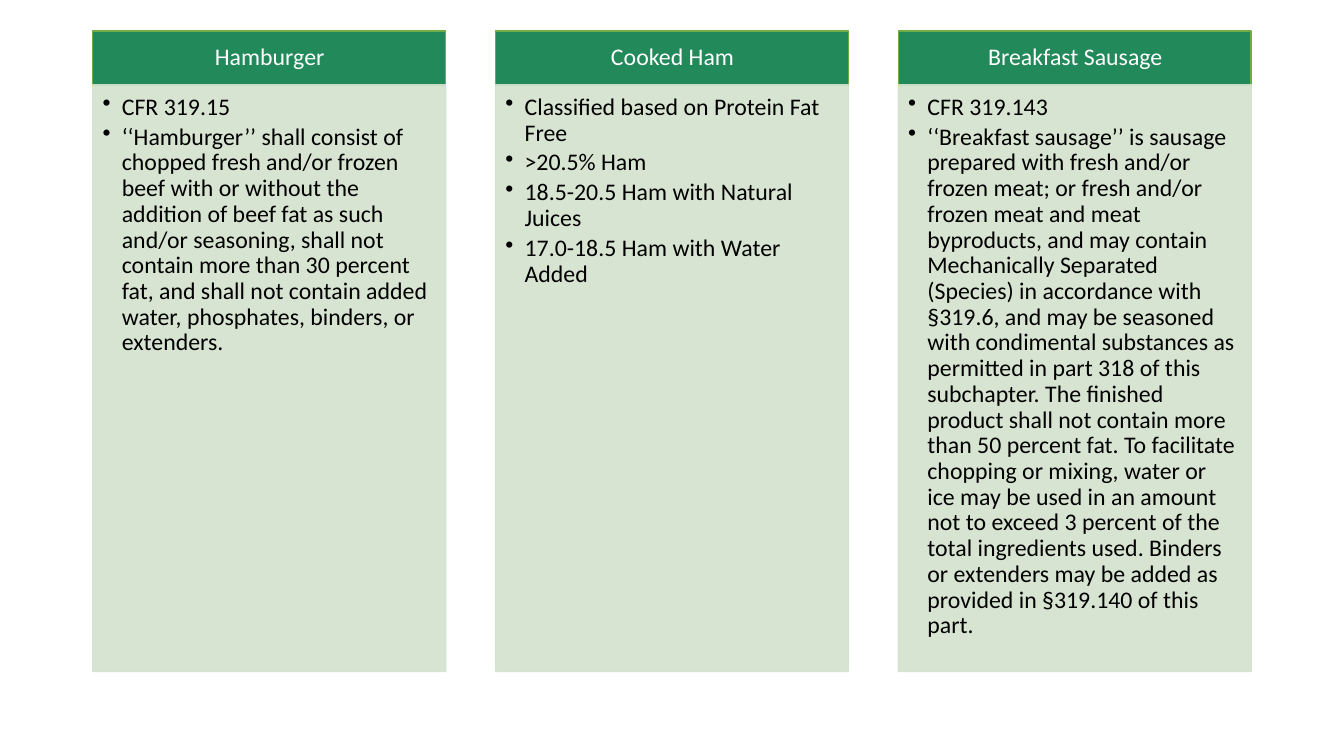
from dataclasses import dataclass

import lxml.etree
import pptx
import pptx.dml.color
import pptx.enum.shapes
import pptx.enum.text
import pptx.oxml.ns
import pptx.util

Inches = pptx.util.Inches
Pt = pptx.util.Pt
qn = pptx.oxml.ns.qn
PP_ALIGN = pptx.enum.text.PP_ALIGN
MSO_ANCHOR = pptx.enum.text.MSO_ANCHOR


@dataclass(frozen=True)
class Theme:
    header: str = "22895A"
    header_line: str = "70AD47"
    panel: str = "D4E2CE"
    header_text: str = "FFFFFF"
    body_text: str = "000000"
    font: str = "Calibri"
    size: int = 17
    panel_opacity: int = 90


@dataclass(frozen=True)
class Product:
    name: str
    rules: tuple[str, ...]
    text_height: float


THEME = Theme()

# Column geometry in inches
FIRST_LEFT, LAST_LEFT, WIDTH = 0.92, 8.91, 3.5
HEADER_TOP, HEADER_HEIGHT = 0.31, 0.54
PANEL_TOP, PANEL_HEIGHT = 0.84, 5.82
BULLET_INDENT = 0.19

PRODUCTS = (
    Product("Hamburger", (
        "CFR 319.15",
        "‘‘Hamburger’’ shall consist of chopped fresh and/or frozen beef with or "
        "without the addition of beef fat as such and/or seasoning, shall not "
        "contain more than 30 percent fat, and shall not contain added water, "
        "phosphates, binders, or extenders.",
    ), 2.9),
    Product("Cooked Ham", (
        "Classified based on Protein Fat Free",
        ">20.5% Ham",
        "18.5-20.5 Ham with Natural Juices",
        "17.0-18.5 Ham with Water Added",
    ), 2.19),
    Product("Breakfast Sausage", (
        "CFR 319.143",
        "‘‘Breakfast sausage’’ is sausage prepared with fresh and/or frozen meat; "
        "or fresh and/or frozen meat and meat byproducts, and may contain "
        "Mechanically Separated (Species) in accordance with §319.6, and may be "
        "seasoned with condimental substances as permitted in part 318 of this "
        "subchapter. The finished product shall not contain more than 50 percent "
        "fat. To facilitate chopping or mixing, water or ice may be used in an "
        "amount not to exceed 3 percent of the total ingredients used. Binders or "
        "extenders may be added as provided in §319.140 of this part.",
    ), 5.78),
)


def rgb(color: str) -> pptx.dml.color.RGBColor:
    return pptx.dml.color.RGBColor.from_string(color)


def set_all(target, formats: dict) -> None:
    for name, value in formats.items():
        setattr(target, name, value)


def add_box(s, left: float, top: float, height: float, fill: str, line: str,
            opacity: int = 100) -> None:
    sp = s.shapes.add_shape(pptx.enum.shapes.MSO_SHAPE.RECTANGLE, Inches(left),
                            Inches(top), Inches(WIDTH), Inches(height))
    sp.shadow.inherit = False
    sp.line.width = Pt(1)
    for paint, color in ((sp.fill, fill), (sp.line.fill, line)):
        paint.solid()
        paint.fore_color.rgb = rgb(color)
    if opacity < 100:
        for clr in sp._element.spPr.iter(qn("a:srgbClr")):
            lxml.etree.SubElement(clr, qn("a:alpha"), val=str(opacity * 1000))


def add_bullet(p) -> None:
    pPr = p._p.get_or_add_pPr()
    indent = Inches(BULLET_INDENT)
    pPr.set("marL", str(indent))
    pPr.set("indent", str(-indent))
    lxml.etree.SubElement(pPr, qn("a:buChar"), char="•")


def add_text(s, at: tuple[float, float, float, float], lines: tuple[str, ...],
             color: str, inset: float, anchor: MSO_ANCHOR, formats: dict,
             bulleted: bool = False) -> None:
    tf = s.shapes.add_textbox(*map(Inches, at)).text_frame
    set_all(tf, {
        "word_wrap": True,
        "auto_size": pptx.enum.text.MSO_AUTO_SIZE.SHAPE_TO_FIT_TEXT,
        "vertical_anchor": anchor,
        **{f"margin_{side}": Inches(inset)
           for side in ("left", "top", "right", "bottom")},
    })
    for i, line in enumerate(lines):
        p = tf.add_paragraph() if i else tf.paragraphs[0]
        set_all(p, {"line_spacing": 0.9, **formats})
        if bulleted:
            add_bullet(p)
        r = p.add_run()
        r.text = line
        set_all(r.font, {"name": THEME.font, "size": Pt(THEME.size)})
        r.font.color.rgb = rgb(color)


def add_column(s, product: Product, left: float) -> None:
    # Header
    add_box(s, left, HEADER_TOP, HEADER_HEIGHT, THEME.header, THEME.header_line)
    add_text(s, (left + 0.06, HEADER_TOP + 0.04, 3.39, 0.44), (product.name,),
             THEME.header_text, 0.08, MSO_ANCHOR.MIDDLE,
             {"alignment": PP_ALIGN.CENTER, "space_before": Pt(7)})
    # Panel with bulleted rules
    add_box(s, left, PANEL_TOP, PANEL_HEIGHT, THEME.panel, THEME.panel,
            THEME.panel_opacity)
    add_text(s, (left, PANEL_TOP, 3.47, product.text_height), product.rules,
             THEME.body_text, 0.1, MSO_ANCHOR.TOP,
             {"level": 1, "alignment": PP_ALIGN.LEFT, "space_before": Pt(3)},
             bulleted=True)


def main() -> None:
    prs = pptx.Presentation()
    set_all(prs, {"slide_width": Inches(13.33), "slide_height": Inches(7.5)})
    s = prs.slides.add_slide(prs.slide_layouts.get_by_name("Blank"))
    pitch = (LAST_LEFT - FIRST_LEFT) / (len(PRODUCTS) - 1)
    for i, product in enumerate(PRODUCTS):
        add_column(s, product, FIRST_LEFT + i * pitch)
    prs.save("out.pptx")


if __name__ == "__main__":
    main()
